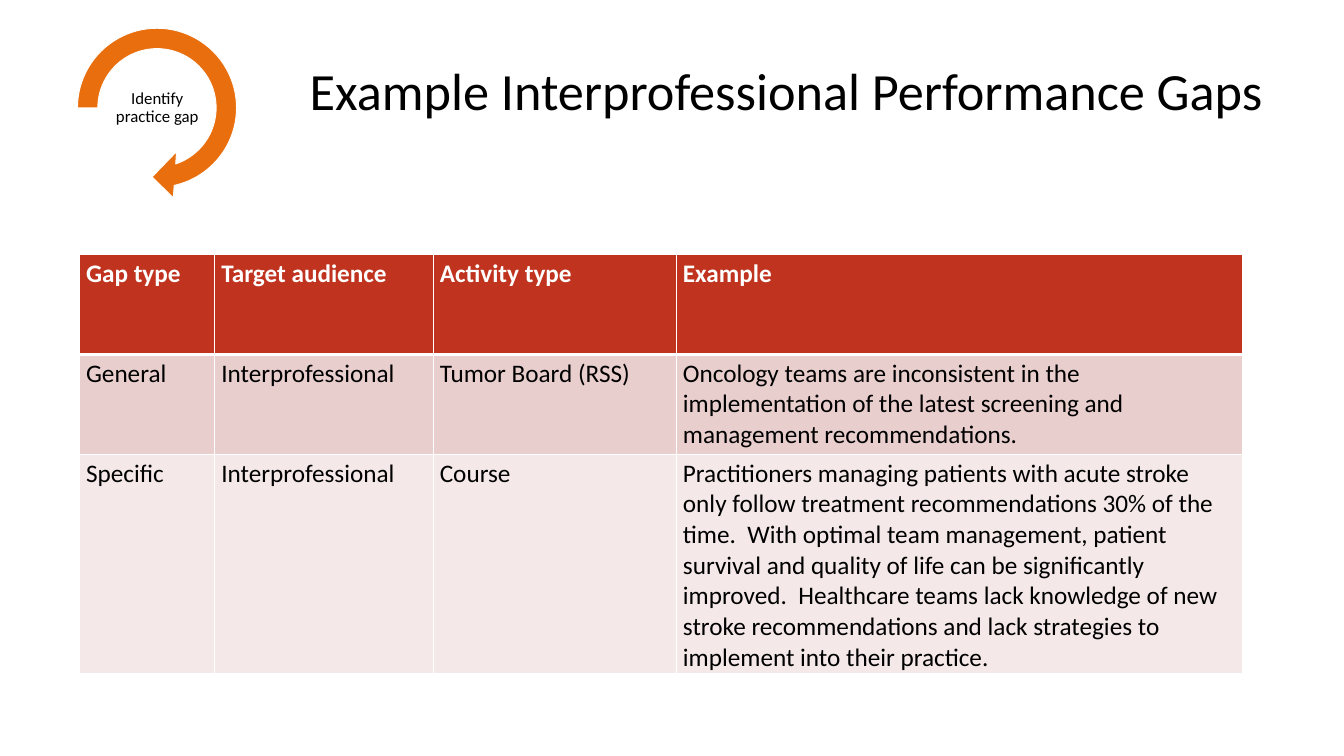
from lxml import etree
from pptx import Presentation
from pptx import util as u
from pptx.dml.color import RGBColor
from pptx.enum import shapes, text
from pptx.oxml import ns

BLACK = RGBColor(0x00, 0x00, 0x00)
WHITE = RGBColor(0xFF, 0xFF, 0xFF)
ORANGE = RGBColor(0xE9, 0x6E, 0x0D)
RED = RGBColor(0xC0, 0x33, 0x1F)
ROSE = RGBColor(0xE8, 0xCE, 0xCD)
PALE_ROSE = RGBColor(0xF4, 0xE8, 0xE8)

TITLE = "Example Interprofessional Performance Gaps"
STEP = "Identify practice gap"
GAPS = [
    ("Gap type", "Target audience", "Activity type", "Example"),
    ("General", "Interprofessional", "Tumor Board (RSS)",
     "Oncology teams are inconsistent in the implementation of the latest "
     "screening and management recommendations."),
    ("Specific", "Interprofessional", "Course",
     "Practitioners managing patients with acute stroke only follow treatment "
     "recommendations 30% of the time.  With optimal team management, patient "
     "survival and quality of life can be significantly improved.  Healthcare "
     "teams lack knowledge of new stroke recommendations and lack strategies "
     "to implement into their practice."),
]
COLUMN_WIDTHS = (5.11, 8.26, 9.19, 21.39)
ROW_HEIGHT = 3.78
ROW_FILLS = (RED, ROSE, PALE_ROSE)
ARROW_BENDS = (0.11, 11.42, 45, 108, 0.125)

FRAME = {"word_wrap": True, "vertical_anchor": text.MSO_ANCHOR.MIDDLE}
TIGHT = {side: u.Cm(0.03) for side in
         ("margin_left", "margin_top", "margin_right", "margin_bottom")}
CENTRED = {"alignment": text.PP_ALIGN.CENTER, "line_spacing": 0.9}


def apply(target, values):
    for name, value in values.items():
        setattr(target, name, value)


def set_font(font, size, color=BLACK, bold=False):
    apply(font, {"name": "Calibri", "size": u.Pt(size), "bold": bold})
    font.color.rgb = color


def add_text(slide, words, place, size, frame_format):
    frame = slide.shapes.add_textbox(*map(u.Cm, place)).text_frame
    apply(frame, frame_format)
    paragraph = frame.paragraphs[0]
    paragraph.text = words
    apply(paragraph, CENTRED)
    set_font(paragraph.runs[0].font, size)


def set_borders(cell, widths):
    properties = cell._tc.get_or_add_tcPr()
    for side, width in widths.items():
        line = etree.SubElement(properties, ns.qn(f"a:ln{side}"), w=str(u.Pt(width)))
        fill = etree.SubElement(line, ns.qn("a:solidFill"))
        etree.SubElement(fill, ns.qn("a:srgbClr"), val=str(WHITE))


def add_step(slide):
    arrow = slide.shapes.add_shape(shapes.MSO_SHAPE.CIRCULAR_ARROW,
                                   *map(u.Cm, (2.44, 0.58, 6.99, 6.99)))
    arrow.shadow.inherit = False
    for i, bend in enumerate(ARROW_BENDS):
        arrow.adjustments[i] = bend
    arrow.fill.solid()
    arrow.fill.fore_color.rgb = ORANGE
    arrow.line.color.rgb = WHITE
    arrow.line.width = u.Pt(1)
    add_text(slide, STEP, (3.99, 3.1, 3.91, 1.96), 18, FRAME | TIGHT)


def add_gaps(slide):
    place = (3, 9.63, sum(COLUMN_WIDTHS), ROW_HEIGHT * len(GAPS))
    table = slide.shapes.add_table(len(GAPS), len(COLUMN_WIDTHS),
                                   *map(u.Cm, place)).table
    for column, width in zip(table.columns, COLUMN_WIDTHS):
        column.width = u.Cm(width)
    for r, (gap, color) in enumerate(zip(GAPS, ROW_FILLS)):
        header = r == 0
        table.rows[r].height = u.Cm(ROW_HEIGHT)
        borders = {"L": 1, "R": 1, "T": 3 if r == 1 else 1, "B": 3 if header else 1}
        for c, words in enumerate(gap):
            cell = table.cell(r, c)
            cell.text = words
            set_font(cell.text_frame.paragraphs[0].runs[0].font, 27,
                     WHITE if header else BLACK, header)
            set_borders(cell, borders)
            cell.fill.solid()
            cell.fill.fore_color.rgb = color


def main():
    deck = Presentation()
    apply(deck, {"slide_width": u.Cm(50.8), "slide_height": u.Cm(28.58)})
    slide = deck.slides.add_slide(deck.slide_layouts[6])
    add_text(slide, TITLE, (9.32, 2.39, 40.82, 2.26), 56, FRAME)
    add_step(slide)
    add_gaps(slide)
    deck.save("out.pptx")


if __name__ == "__main__":
    main()
